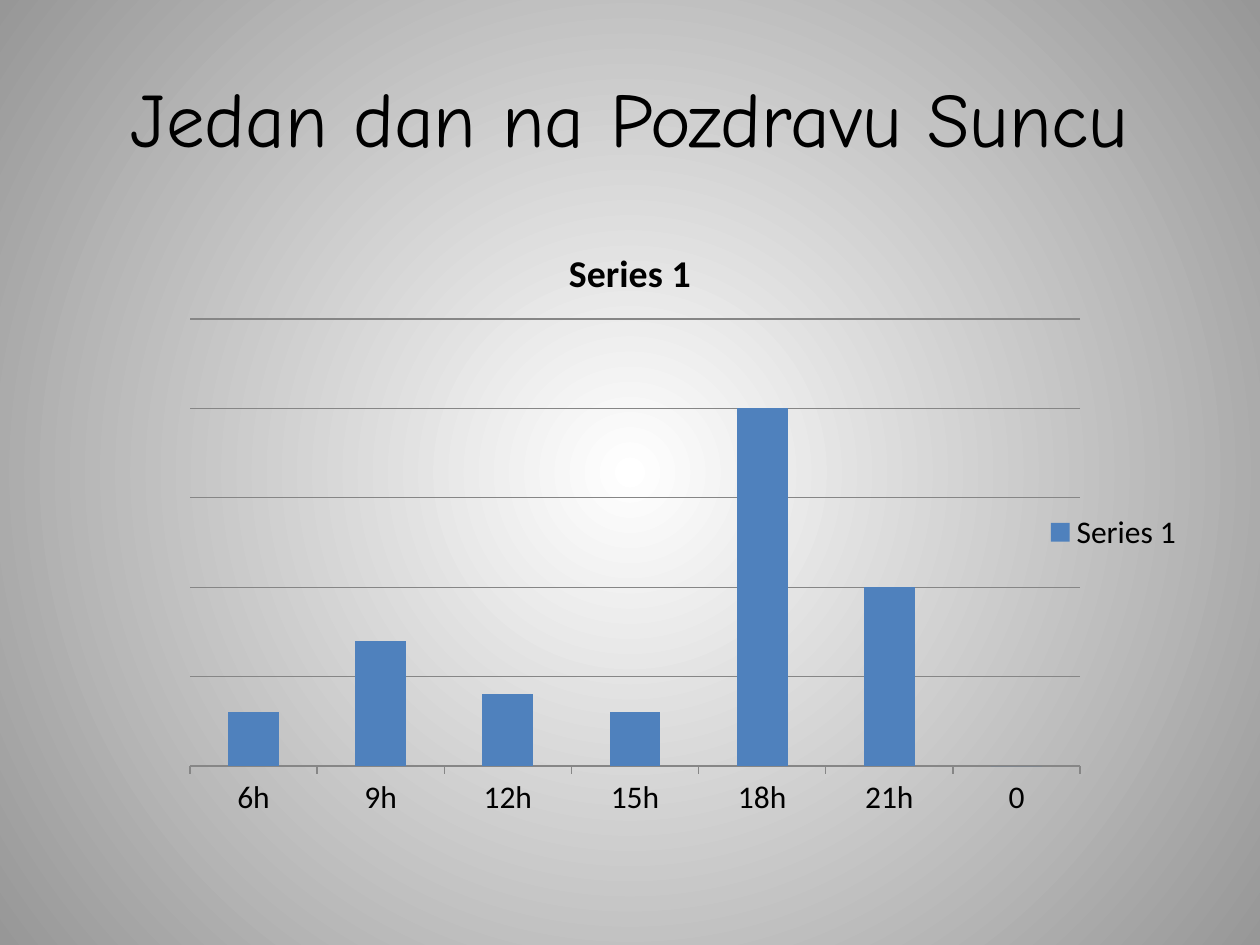
from dataclasses import dataclass

from lxml import etree
from pptx import Presentation
from pptx.chart.data import CategoryChartData
from pptx.dml.color import RGBColor
from pptx.enum.chart import XL_CHART_TYPE, XL_LEGEND_POSITION, XL_TICK_MARK
from pptx.enum.text import MSO_ANCHOR, PP_ALIGN
from pptx.oxml import parse_xml
from pptx.oxml.ns import nsdecls, qn
from pptx.util import Inches, Pt

COLUMN = XL_CHART_TYPE.COLUMN_CLUSTERED
RIGHT = XL_LEGEND_POSITION.RIGHT
OUTSIDE, NONE = XL_TICK_MARK.OUTSIDE, XL_TICK_MARK.NONE
MIDDLE, CENTER = MSO_ANCHOR.MIDDLE, PP_ALIGN.CENTER
WIDTH, HEIGHT = Inches(10), Inches(7.5)


@dataclass(frozen=True)
class Theme:
    ink = RGBColor(0, 0, 0)
    bar = RGBColor.from_string("4F81BD")
    rule = RGBColor.from_string("868686")
    glow = RGBColor.from_string("FFFFFF")
    edge = RGBColor.from_string("979797")
    head = "Comic Neue"
    body = "Calibri"
    large = Pt(44)
    mid = Pt(21.6)
    small = Pt(18)
    thin = Pt(0.75)


THEME = Theme()


def share(left, top, width, height):
    return (round(left * WIDTH), round(top * HEIGHT),
            round(width * WIDTH), round(height * HEIGHT))


def style(font, name, size, bold=False):
    font.name, font.size, font.bold = name, size, bold
    font.color.rgb = THEME.ink


def paint(slide):
    fill = slide.background.fill
    fill.gradient()
    for stop, color in zip(fill.gradient_stops, (THEME.glow, THEME.edge)):
        stop.color.rgb = color
    grad = next(slide.element.iter(qn("a:gradFill")))
    grad.replace(grad.find(qn("a:lin")), parse_xml(
        f'<a:path {nsdecls("a")} path="circle">'
        '<a:fillToRect l="50000" t="50000" r="50000" b="50000"/></a:path>'))


def add_title(slide, box, text):
    title = slide.shapes.title
    title.left, title.top, title.width, title.height = box
    frame = title.text_frame
    frame.text = text
    frame.vertical_anchor = MIDDLE
    line = frame.paragraphs[0]
    line.alignment = CENTER
    style(line.font, THEME.head, THEME.large)


def set_plot(chart, **sizes):
    area = next(chart.element.iter(qn("c:plotArea")))
    for old in area.findall(qn("c:layout")):
        area.remove(old)
    layout = parse_xml(f'<c:layout {nsdecls("c")}/>')
    manual = etree.SubElement(layout, qn("c:manualLayout"))
    rules = {"layoutTarget": "inner", "xMode": "edge", "yMode": "edge", **sizes}
    for tag, value in rules.items():
        etree.SubElement(manual, qn(f"c:{tag}")).set("val", str(value))
    area.insert(0, layout)


def rule(line):
    line.color.rgb = THEME.rule
    line.width = THEME.thin


def add_bars(slide, box, name, points):
    data = CategoryChartData()
    data.categories = list(points)
    data.add_series(name, list(points.values()))
    chart = slide.shapes.add_chart(COLUMN, *box, data).chart
    style(chart.font, THEME.body, THEME.small)

    chart.has_title = True
    chart.chart_title.include_in_layout = False
    frame = chart.chart_title.text_frame
    frame.text = name
    style(frame.paragraphs[0].font, THEME.body, THEME.mid, True)

    chart.has_legend = True
    chart.legend.position = RIGHT
    chart.legend.include_in_layout = False

    plot = chart.plots[0]
    plot.gap_width = 150
    plot.vary_by_categories = False
    fill = plot.series[0].format.fill
    fill.solid()
    fill.fore_color.rgb = THEME.bar

    base, scale = chart.category_axis, chart.value_axis
    base.major_tick_mark, base.minor_tick_mark = OUTSIDE, NONE
    rule(base.format.line)
    scale.visible = False
    scale.minimum_scale, scale.maximum_scale, scale.major_unit = 0, 125, 25
    scale.has_major_gridlines = True
    rule(scale.major_gridlines.format.line)
    set_plot(chart, x=0.112, y=0.158, w=0.785, h=0.717)


def main():
    deck = Presentation()
    deck.slide_width, deck.slide_height = WIDTH, HEIGHT
    slide = deck.slides.add_slide(deck.slide_layouts[5])
    paint(slide)
    add_title(slide, share(0.05, 0.04, 0.9, 1 / 6), "Jedan dan na Pozdravu Suncu")
    hours = {"6h": 15, "9h": 35, "12h": 20, "15h": 15,
             "18h": 100, "21h": 50, "0": 0}
    add_bars(slide, share(0.05, 7 / 30, 0.9, 0.66), "Series 1", hours)
    deck.save("out.pptx")


if __name__ == "__main__":
    main()
